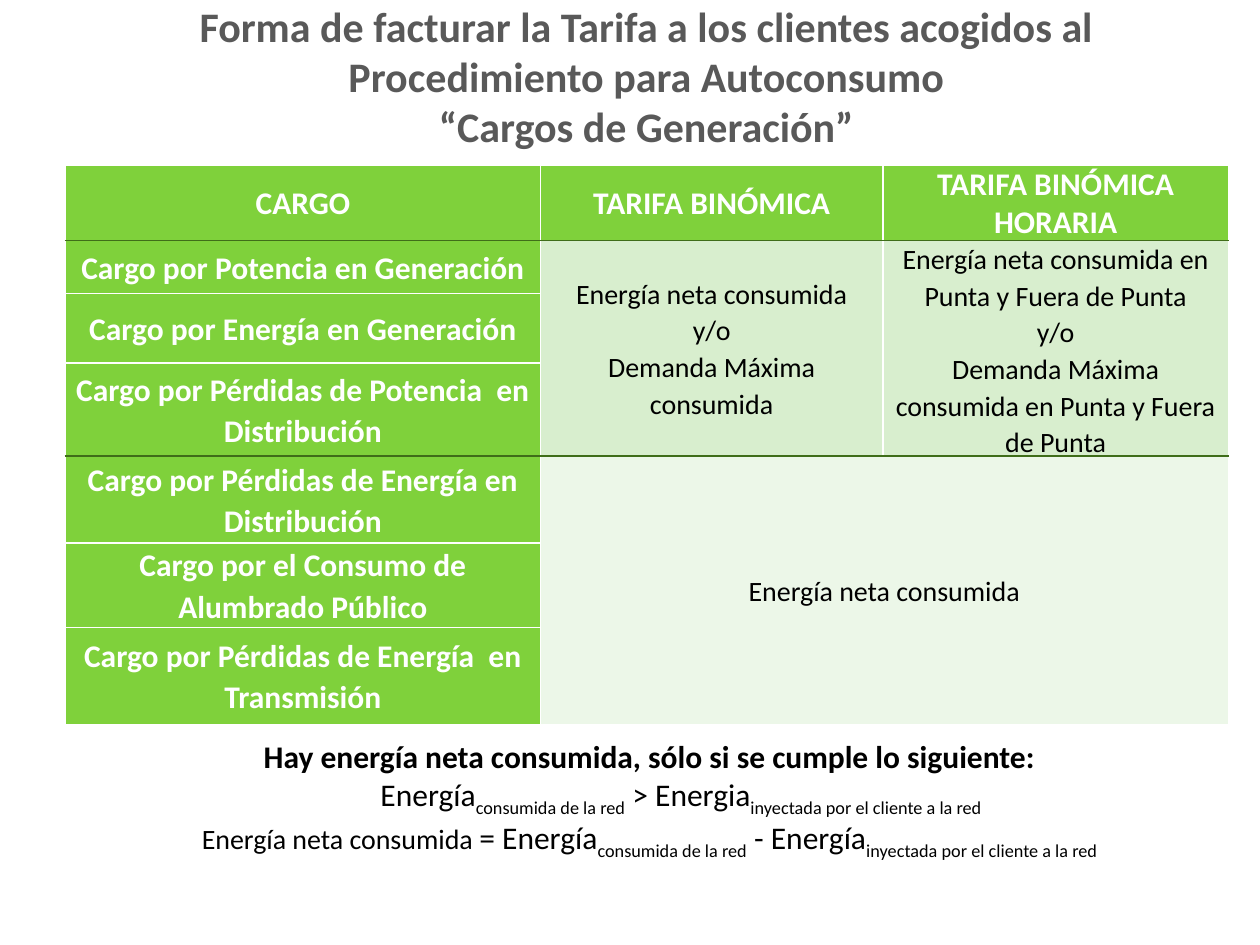
import lxml.etree
import pptx
import pptx.dml.color
import pptx.enum.shapes
import pptx.enum.text
import pptx.oxml.ns
import pptx.util

Pt = pptx.util.Pt
RGBColor = pptx.dml.color.RGBColor
CENTER = pptx.enum.text.PP_ALIGN.CENTER
MIDDLE = pptx.enum.text.MSO_ANCHOR.MIDDLE
TOP = pptx.enum.text.MSO_ANCHOR.TOP

WHITE = RGBColor(0xFF, 0xFF, 0xFF)
BLACK = RGBColor(0, 0, 0)
GRAY = RGBColor(0x59, 0x59, 0x59)
GREEN = RGBColor(0x7F, 0xD1, 0x3B)
DARK_GREEN = RGBColor(0x3F, 0x6D, 0x19)
PALE_GREEN = RGBColor(0xD8, 0xEE, 0xCE)
PALEST_GREEN = RGBColor(0xEC, 0xF7, 0xE8)

COLUMN_WIDTHS = [271.4, 195.8, 197.3]
ROW_HEIGHTS = [39.6, 30.2, 39.6, 45.4, 49.7, 48.2, 55.4]
HEADINGS = ["CARGO", "TARIFA BINÓMICA", "TARIFA BINÓMICA HORARIA"]
CHARGES = [
    "Cargo por Potencia en Generación",
    "Cargo por Energía en Generación",
    "Cargo por Pérdidas de Potencia  en Distribución",
    "Cargo por Pérdidas de Energía en Distribución",
    "Cargo por el Consumo de Alumbrado Público",
    "Cargo por Pérdidas de Energía  en Transmisión",
]
MERGED_CELLS = [
    (1, 1, 3, 1, PALE_GREEN,
     "Energía neta consumida\ny/o\nDemanda Máxima consumida"),
    (1, 2, 3, 2, PALE_GREEN,
     "Energía neta consumida en Punta y Fuera de Punta\ny/o\n"
     "Demanda Máxima consumida en Punta y Fuera de Punta"),
    (4, 1, 6, 2, PALEST_GREEN, "Energía neta consumida"),
]
GREEN_RULES = (1, 4)
CONSUMED = ("consumida de la red", 18, False, True)
INJECTED = ("inyectada por el cliente a la red", 18, False, True)
CONDITIONS = [
    [("Hay energía neta consumida, sólo si se cumple lo siguiente:", 18, True, False)],
    [("\tEnergía", 18, False, False), CONSUMED,
     (" > Energia", 18, False, False), INJECTED],
    [("Energía neta consumida ", 16, False, False), ("= Energía", 18, False, False),
     CONSUMED, (" - Energía", 18, False, False), INJECTED],
]


class Composer:
    font_name = "Calibri"
    line_spacing = 1.07

    def __init__(self, page):
        self.page = page

    def style(self, font, size, color, bold):
        font.name = self.font_name
        font.size = Pt(size)
        font.bold = bold
        font.color.rgb = color

    def title(self, text, left, top, width, height):
        box = self.page.shapes.add_textbox(Pt(left), Pt(top), Pt(width), Pt(height))
        frame = box.text_frame
        frame.word_wrap = True
        frame.vertical_anchor = MIDDLE
        frame.text = text
        para = frame.paragraphs[0]
        para.alignment = CENTER
        for span in para.runs:
            self.style(span.font, 24, GRAY, True)

    def border(self, cell, side, color):
        properties = cell._tc.get_or_add_tcPr()
        qn = pptx.oxml.ns.qn
        line = lxml.etree.SubElement(properties, qn(f"a:ln{side}"), w=str(Pt(1)))
        fill = lxml.etree.SubElement(line, qn("a:solidFill"))
        lxml.etree.SubElement(fill, qn("a:srgbClr"), val=str(color))

    def cell(self, cell, text, fill, size, color, bold):
        cell.fill.solid()
        cell.fill.fore_color.rgb = fill
        cell.margin_left = cell.margin_right = Pt(5)
        cell.margin_top = cell.margin_bottom = 0
        cell.vertical_anchor = MIDDLE
        cell.text_frame.text = text
        for para in cell.text_frame.paragraphs:
            para.alignment = CENTER
            para.line_spacing = self.line_spacing
            self.style(para.font, size, color, bold)
            for span in para.runs:
                self.style(span.font, size, color, bold)

    def table(self, left, top):
        table = self.page.shapes.add_table(
            len(ROW_HEIGHTS), len(COLUMN_WIDTHS), Pt(left), Pt(top),
            Pt(sum(COLUMN_WIDTHS)), Pt(sum(ROW_HEIGHTS))).table
        table.first_row = table.horz_banding = False
        for column, width in zip(table.columns, COLUMN_WIDTHS):
            column.width = Pt(width)
        for index, (row, height) in enumerate(zip(table.rows, ROW_HEIGHTS)):
            row.height = Pt(height)
            upper = DARK_GREEN if index in GREEN_RULES else WHITE
            lower = DARK_GREEN if index + 1 in GREEN_RULES else WHITE
            for cell in row.cells:
                for side, color in zip("LRTB", (WHITE, WHITE, upper, lower)):
                    self.border(cell, side, color)
        for index, heading in enumerate(HEADINGS):
            self.cell(table.cell(0, index), heading, GREEN, 18, WHITE, True)
        table.cell(0, 2).text_frame.paragraphs[0].line_spacing = 1.0
        for index, charge in enumerate(CHARGES, 1):
            self.cell(table.cell(index, 0), charge, GREEN, 18, WHITE, True)
        for first_row, first_column, last_row, last_column, fill, text in MERGED_CELLS:
            origin = table.cell(first_row, first_column)
            origin.merge(table.cell(last_row, last_column))
            self.cell(origin, text, fill, 16, BLACK, False)

    def conditions(self, lines, left, top, width, height):
        box = self.page.shapes.add_shape(
            pptx.enum.shapes.MSO_SHAPE.RECTANGLE, Pt(left), Pt(top), Pt(width), Pt(height))
        box.shadow.inherit = False
        box.fill.solid()
        box.fill.fore_color.rgb = WHITE
        box.line.fill.background()
        frame = box.text_frame
        frame.word_wrap = True
        frame.vertical_anchor = TOP
        for index, line in enumerate(lines):
            para = frame.add_paragraph() if index else frame.paragraphs[0]
            para.alignment = CENTER
            for text, size, bold, lowered in line:
                span = para.add_run()
                span.text = text
                self.style(span.font, size, BLACK, bold)
                if lowered:
                    span.font._element.set("baseline", "-25000")


def main():
    deck = pptx.Presentation()
    deck.slide_width = Pt(720)
    deck.slide_height = Pt(540)
    composer = Composer(deck.slides.add_slide(deck.slide_layouts[6]))
    composer.title(
        "Forma de facturar la Tarifa a los clientes acogidos al "
        "Procedimiento para Autoconsumo\v“Cargos de Generación”",
        36.7, 9.4, 665.3, 67.7)
    composer.table(37.4, 94.3)
    composer.conditions(CONDITIONS, 42.5, 417.6, 657.4, 123.8)
    deck.save("out.pptx")


if __name__ == "__main__":
    main()
